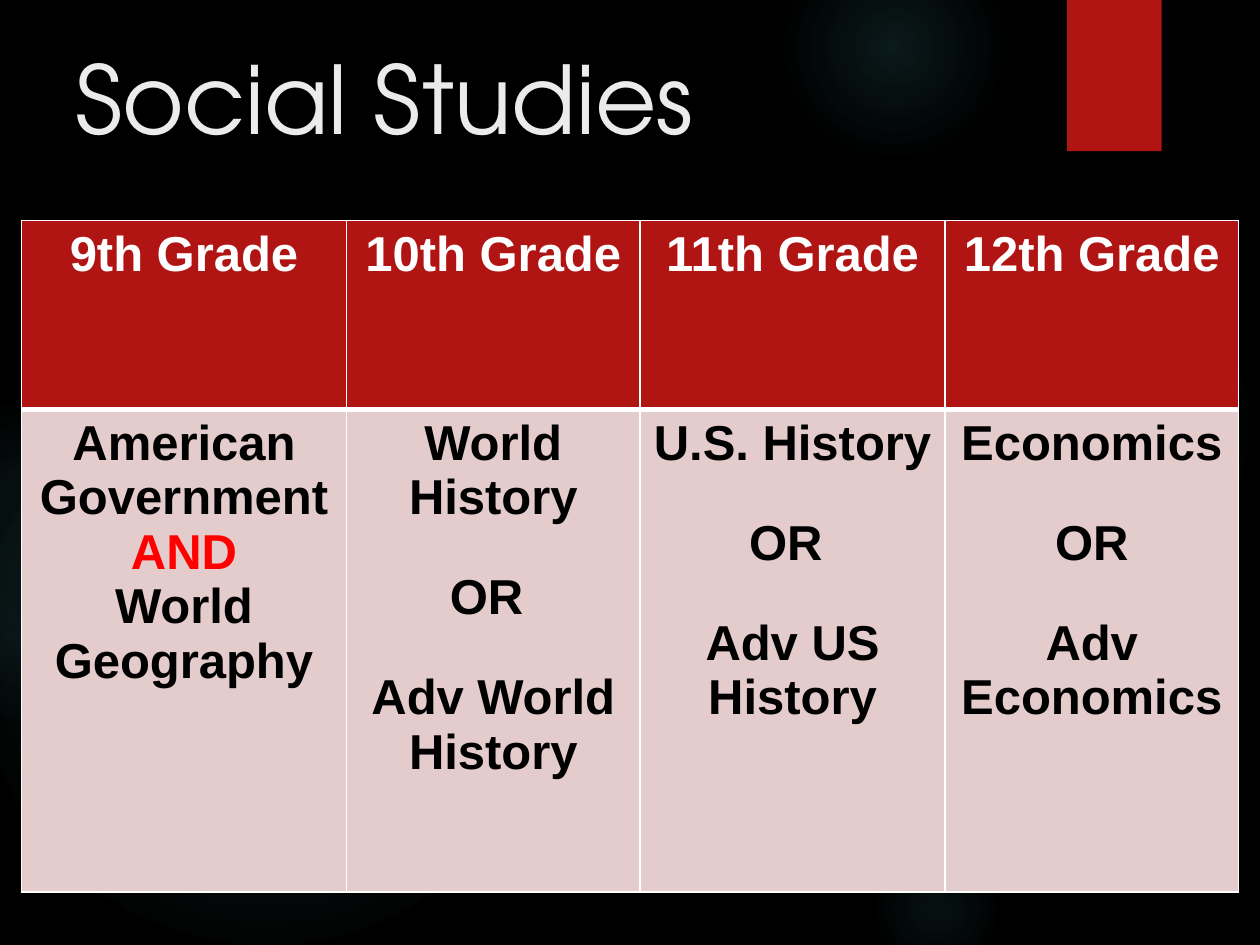
from lxml import etree
from pptx import Presentation
from pptx.dml.color import RGBColor
from pptx.enum.shapes import MSO_SHAPE
from pptx.enum.text import MSO_ANCHOR, PP_ALIGN
from pptx.oxml import parse_xml
from pptx.oxml.ns import nsdecls, qn
from pptx.util import Inches, Pt

OVAL, RECT = MSO_SHAPE.OVAL, MSO_SHAPE.RECTANGLE
CENTER, TOP = PP_ALIGN.CENTER, MSO_ANCHOR.TOP
C = {"black": "000000", "glow": "50B9C1", "red": "B01513", "title": "EBEBEB",
     "white": "FFFFFF", "pink": "E4CCCC", "and": "FF0000"}


def add_run(p, text, size, font, color, bold=False):
    r = p.add_run()
    r.text = text
    r.font.size = Pt(size)
    r.font.name = font
    r.font.bold = bold
    r.font.color.rgb = RGBColor.from_string(C[color])


def style_cell(cell, fill, bottom):
    cell.fill.solid()
    cell.fill.fore_color.rgb = RGBColor.from_string(C[fill])
    tcPr = cell._tc.get_or_add_tcPr()
    for i, side in enumerate("LRTB"):
        width = Pt(bottom if side == "B" else 1)
        ln = etree.Element(qn(f"a:ln{side}"), w=str(width))
        solid = etree.SubElement(ln, qn("a:solidFill"))
        etree.SubElement(solid, qn("a:srgbClr"), val=C["white"])
        tcPr.insert(i, ln)


prs = Presentation()
prs.slide_width, prs.slide_height = Inches(10), Inches(7.5)
s = prs.slides.add_slide(prs.slide_layouts[6])
s.background.fill.solid()
s.background.fill.fore_color.rgb = RGBColor.from_string(C["black"])

glows = [
    (6.89, 1.83, 3.08, [(0, 7), (36, 6), (69, 0)]),
    (6.22, -0.5, 1.75, [(0, 14), (36, 7), (73, 0)]),
    (6.89, 6.67, 1.08, [(0, 9), (36, 5), (66, 0)]),
    (-0.17, 2.92, 4.58, [(0, 11), (36, 10), (75, 0)]),
    (-0.92, 3.17, 2.58, [(0, 8), (36, 8), (72, 0)]),
]
for x, y, d, stops in glows:
    sp = s.shapes.add_shape(OVAL, Inches(x), Inches(y), Inches(d), Inches(d))
    sp.shadow.inherit = False
    sp.line.fill.background()
    gs = "".join(
        f'<a:gs pos="{pos * 1000}"><a:srgbClr val="{C["glow"]}">'
        f'<a:alpha val="{alpha * 1000}"/></a:srgbClr></a:gs>'
        for pos, alpha in stops)
    grad = parse_xml(
        f'<a:gradFill {nsdecls("a")} rotWithShape="1"><a:gsLst>{gs}</a:gsLst>'
        '<a:path path="circle"><a:fillToRect l="50000" t="50000" r="50000" b="50000"/>'
        '</a:path></a:gradFill>')
    sp._element.spPr.find(qn("a:prstGeom")).addnext(grad)

sp = s.shapes.add_shape(RECT, Inches(8.47), 0, Inches(0.75), Inches(1.2))
sp.shadow.inherit = False
sp.fill.solid()
sp.fill.fore_color.rgb = RGBColor.from_string(C["red"])
sp.line.fill.background()

tf = s.shapes.add_textbox(Inches(0.5), Inches(0.27), Inches(9.17), Inches(1.57)).text_frame
tf.word_wrap = True
tf.vertical_anchor = TOP
add_run(tf.paragraphs[0], "Social Studies", 54, "TeX Gyre Adventor", "title")

courses = [
    ("9th Grade", ["American Government ", "AND", "World Geography"], 0),
    ("10th Grade", ["World History", "OR ", "Adv World History"], 26),
    ("11th Grade", ["U.S. History", "OR ", "Adv US History"], 26),
    ("12th Grade", ["Economics", "OR", "Adv Economics"], 26),
]
table = s.shapes.add_table(2, len(courses), Inches(0.17), Inches(1.75),
                           Inches(9.67), Inches(5.33)).table
for row, height in zip(table.rows, (1.5, 3.83)):
    row.height = Inches(height)
for col, width in zip(table.columns, (2.58, 2.33, 2.42, 2.33)):
    col.width = Inches(width)

for j, (grade, lines, gap) in enumerate(courses):
    head, body = table.cell(0, j), table.cell(1, j)
    style_cell(head, "red", 3)
    style_cell(body, "pink", 1)
    p = head.text_frame.paragraphs[0]
    p.alignment = CENTER
    add_run(p, grade, 28, "Arial", "white", True)
    tf = body.text_frame
    for i, line in enumerate(lines):
        p = tf.add_paragraph() if i else tf.paragraphs[0]
        p.alignment = CENTER
        if i and gap:
            p.space_before = Pt(gap)
        add_run(p, line, 28, "Arial", "and" if line == "AND" else "black", True)

prs.save("out.pptx")
